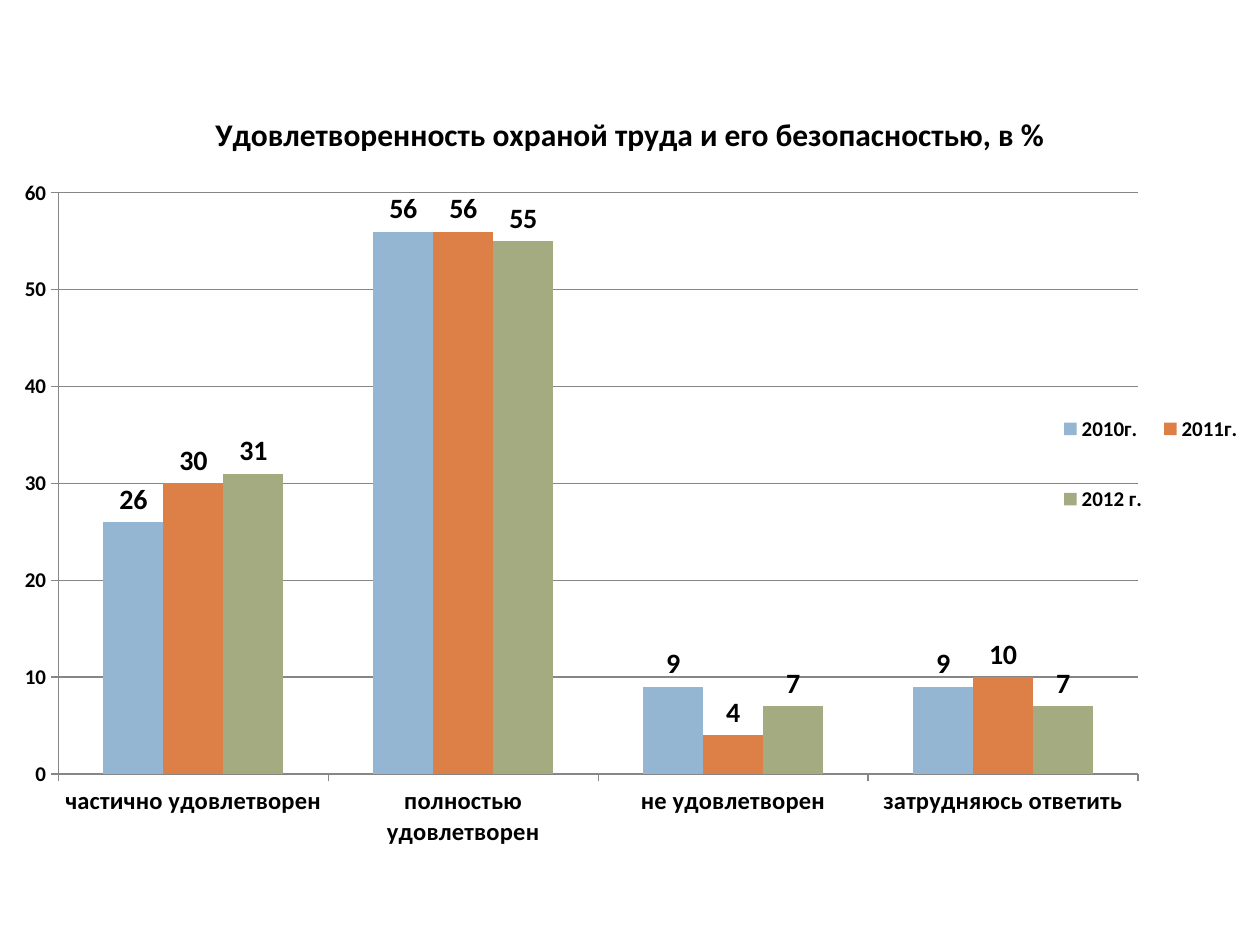
from pptx import Presentation
from pptx.chart.data import CategoryChartData
from pptx.dml.color import RGBColor
from pptx.enum.chart import (XL_CHART_TYPE, XL_LABEL_POSITION, XL_LEGEND_POSITION,
                             XL_TICK_MARK)
from pptx.oxml import parse_xml
from pptx.oxml.ns import nsdecls, qn
from pptx.util import Pt

COLUMNS = XL_CHART_TYPE.COLUMN_CLUSTERED
LABEL_ABOVE = XL_LABEL_POSITION.OUTSIDE_END
LEGEND_RIGHT = XL_LEGEND_POSITION.RIGHT
TICK_OUTSIDE = XL_TICK_MARK.OUTSIDE

FONT = "Calibri"
BLACK = RGBColor(0x00, 0x00, 0x00)
GRAY = RGBColor(0x86, 0x86, 0x86)
BLUE = RGBColor(0x94, 0xB6, 0xD2)
ORANGE = RGBColor(0xDD, 0x80, 0x47)
GREEN = RGBColor(0xA5, 0xAB, 0x81)

TITLE = "Удовлетворенность охраной труда и его безопасностью, в %"
ANSWERS = ["частично удовлетворен", "полностью удовлетворен",
           "не удовлетворен", "затрудняюсь ответить"]
YEARS = [
    ("2010г.", [26, 56, 9, 9], BLUE),
    ("2011г.", [30, 56, 4, 10], ORANGE),
    ("2012 г.", [31, 55, 7, 7], GREEN),
]

# Left, top, width and height as shares of the chart
PLOT_BOX = (0.05, 0.14, 0.85, 0.75)
LEGEND_BOX = (0.83, 0.37, 0.16, 0.24)


def style_font(font, size):
    font.name = FONT
    font.size = Pt(size)
    font.bold = True
    font.color.rgb = BLACK


def place(element, box, index, target=""):
    """Give a chart part a manual layout as its child number index."""
    for old_layout in element.findall(qn("c:layout")):
        element.remove(old_layout)
    x, y, width, height = box
    element.insert(index, parse_xml(
        f'<c:layout {nsdecls("c")}><c:manualLayout>{target}'
        '<c:xMode val="edge"/><c:yMode val="edge"/>'
        f'<c:x val="{x}"/><c:y val="{y}"/><c:w val="{width}"/><c:h val="{height}"/>'
        '</c:manualLayout></c:layout>'))


presentation = Presentation()
presentation.slide_width, presentation.slide_height = Pt(720), Pt(540)
slide = presentation.slides.add_slide(presentation.slide_layouts[6])

chart_data = CategoryChartData()
chart_data.categories = ANSWERS
for year, values, _ in YEARS:
    chart_data.add_series(year, values)
chart = slide.shapes.add_chart(COLUMNS, Pt(-2.9), Pt(48.2), Pt(725.8), Pt(442.8),
                               chart_data).chart
chart.font.name = FONT
chart.font.size = Pt(10)
chart.font.color.rgb = BLACK

chart.has_title = True
title_run = chart.chart_title.text_frame.paragraphs[0].add_run()
title_run.text = TITLE
style_font(title_run.font, 18)
chart.chart_title.include_in_layout = False

for axis, size in ((chart.category_axis, 14), (chart.value_axis, 12)):
    style_font(axis.tick_labels.font, size)
    axis.major_tick_mark = TICK_OUTSIDE
    axis.format.line.color.rgb = GRAY
    axis.format.line.width = Pt(0.75)
value_axis = chart.value_axis
value_axis.minimum_scale, value_axis.maximum_scale, value_axis.major_unit = 0, 60, 10
value_axis.has_major_gridlines = True
value_axis.major_gridlines.format.line.color.rgb = GRAY
value_axis.major_gridlines.format.line.width = Pt(0.75)

plot = chart.plots[0]
plot.gap_width = 150
plot.overlap = 0
plot.vary_by_categories = False
for series, (_, _, color) in zip(plot.series, YEARS):
    series.format.fill.solid()
    series.format.fill.fore_color.rgb = color
    labels = series.data_labels
    labels.show_value = True
    labels.position = LABEL_ABOVE
    style_font(labels.font, 16)

chart.has_legend = True
chart.legend.position = LEGEND_RIGHT
chart.legend.include_in_layout = False
style_font(chart.legend.font, 12)

place(chart._chartSpace.chart.plotArea, PLOT_BOX, 0, '<c:layoutTarget val="inner"/>')
place(chart.legend._element, LEGEND_BOX, 1)

presentation.save("out.pptx")
